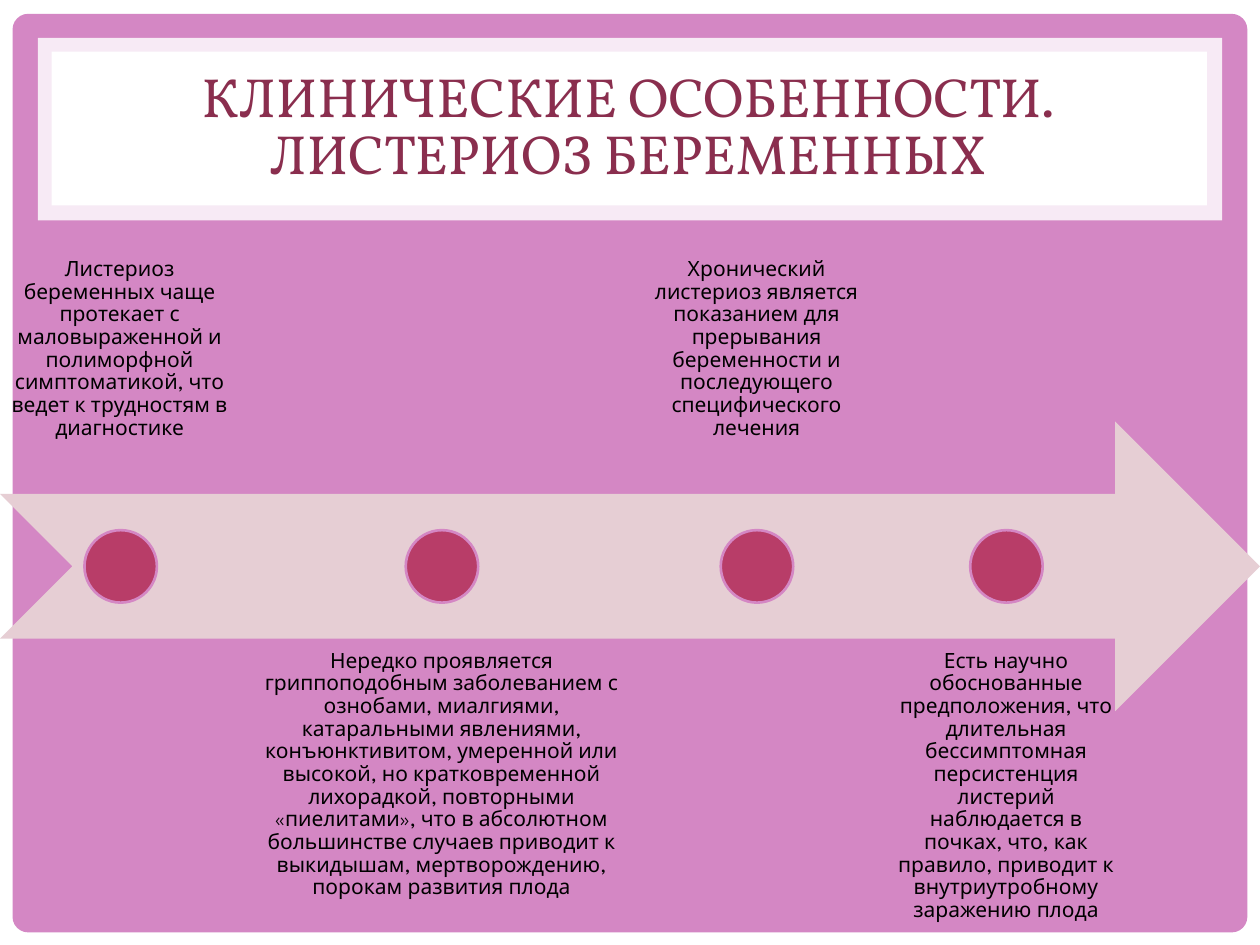
import pptx
import pptx.dml.color
import pptx.enum.shapes
import pptx.enum.text
import pptx.util
from lxml import etree
from pptx.oxml.ns import qn

Inches = pptx.util.Inches
Pt = pptx.util.Pt
SHAPE = pptx.enum.shapes.MSO_SHAPE
ANCHOR = pptx.enum.text.MSO_ANCHOR

ORCHID, WHITE, BLACK = "D487C4", "FFFFFF", "000000"
WINE, BLUSH, RASPBERRY = "8A2E4E", "E6CED4", "B83D68"

# Left and width of each text, its marker's left edge, and its wording
STAGES = [
    (0, 1.9, 0.67, "Листериоз беременных чаще протекает с маловыраженной и полиморфной "
     "симптоматикой, что ведет к трудностям в диагностике"),
    (1.96, 3.09, 3.22, "Нередко проявляется гриппоподобным заболеванием с ознобами, миалгиями, "
     "катаральными явлениями, конъюнктивитом, умеренной или высокой, но кратковременной "
     "лихорадкой, повторными «пиелитами», что в абсолютном большинстве случаев приводит к "
     "выкидышам, мертворождению, порокам развития плода"),
    (5.1, 1.81, 5.72, "Хронический листериоз является показанием для прерывания беременности "
     "и последующего специфического лечения"),
    (6.97, 2.03, 7.7, "Есть научно обоснованные предположения, что длительная бессимптомная "
     "персистенция листерий наблюдается в почках, что, как правило, приводит к "
     "внутриутробному заражению плода"),
]


def color(value):
    return pptx.dml.color.RGBColor.from_string(value)


def place(box):
    return [Inches(length) for length in box]


def add_block(shapes, kind, box, fill, line=None, opacity=None):
    block = shapes.add_shape(kind, *place(box))
    block.shadow.inherit = False
    block.fill.solid()
    block.fill.fore_color.rgb = color(fill)
    if line:
        block.line.color.rgb = color(line)
        block.line.width = Pt(1.5)
    else:
        block.line.fill.background()
    if opacity:
        tone = block.fill._xPr.find(qn("a:solidFill"))[0]
        etree.SubElement(tone, qn("a:alpha"), val=str(opacity * 1000))
    return block


def write_text(frame, text, *, font, size, fill, spacing, anchor, inset):
    frame.word_wrap = True
    frame.auto_size = pptx.enum.text.MSO_AUTO_SIZE.NONE
    frame.vertical_anchor = anchor
    frame.margin_left = frame.margin_right = Inches(inset)
    frame.margin_top = frame.margin_bottom = Inches(inset)
    para = frame.paragraphs[0]
    para.alignment = pptx.enum.text.PP_ALIGN.CENTER
    para.line_spacing = spacing
    span = para.add_run()
    span.text = text
    span.font.name = font
    span.font.size = Pt(size)
    span.font.color.rgb = color(fill)


def add_backdrop(page, width, height):
    page.background.fill.solid()
    page.background.fill.fore_color.rgb = color(ORCHID)
    add_block(page.shapes, SHAPE.RECTANGLE, (0, 0, width, height), WHITE)
    panel = add_block(page.shapes, SHAPE.ROUNDED_RECTANGLE,
                      (0.1, 0.11, width - 0.2, height - 0.21), ORCHID)
    panel.adjustments[0] = 0.017


def add_heading(page, box, text):
    left, top, width, height = box
    # Translucent frame with a white plate inside it
    add_block(page.shapes, SHAPE.RECTANGLE, box, WHITE, opacity=83)
    add_block(page.shapes, SHAPE.RECTANGLE,
              (left + 0.11, top + 0.11, width - 0.23, height - 0.23), WHITE)
    # Title placeholder, brought in front of the plate
    title = page.shapes.title
    title.left, title.top, title.width, title.height = place(
        (left + 0.17, top + 0.15, width - 0.37, height - 0.31))
    write_text(title.text_frame, text, font="Vollkorn", size=31.5, fill=WINE,
               spacing=0.86, anchor=ANCHOR.MIDDLE, inset=0.05)
    page.shapes._spTree.append(title._element)


def add_timeline(page, box, stages):
    left, top, width, height = box
    band = height * 0.4
    marker = band / 4
    parts = page.shapes.add_group_shape().shapes
    # Arrow through the middle
    add_block(parts, SHAPE.NOTCHED_RIGHT_ARROW,
              (left, top + band * 0.75, width, band), BLUSH)
    # Texts alternate above and below the arrow
    for index, (text_left, text_width, marker_left, text) in enumerate(stages):
        below = index % 2 == 1
        text_top = top + (height - band if below else 0) - (0 if below else 0.98 - 0.98)
        label = parts.add_textbox(*place((left + text_left, text_top, text_width, band)))
        write_text(label.text_frame, text, font="League Spartan", size=12, fill=BLACK,
                   spacing=0.9, anchor=ANCHOR.TOP if below else ANCHOR.MIDDLE, inset=0.09)
        add_block(parts, SHAPE.OVAL,
                  (left + marker_left, top + height / 2 - marker / 2, marker, marker),
                  RASPBERRY, line=ORCHID)


def main():
    deck = pptx.Presentation()
    deck.slide_width, deck.slide_height = Inches(10), Inches(7.5)
    page = deck.slides.add_slide(deck.slide_layouts[5])
    add_backdrop(page, 10, 7.5)
    add_heading(page, (0.3, 0.3, 9.4, 1.45),
                "КЛИНИЧЕСКИЕ ОСОБЕННОСТИ. ЛИСТЕРИОЗ БЕРЕМЕННЫХ")
    add_timeline(page, (0, 1.62, 10, 5.75), STAGES)
    deck.save("out.pptx")


if __name__ == "__main__":
    main()
